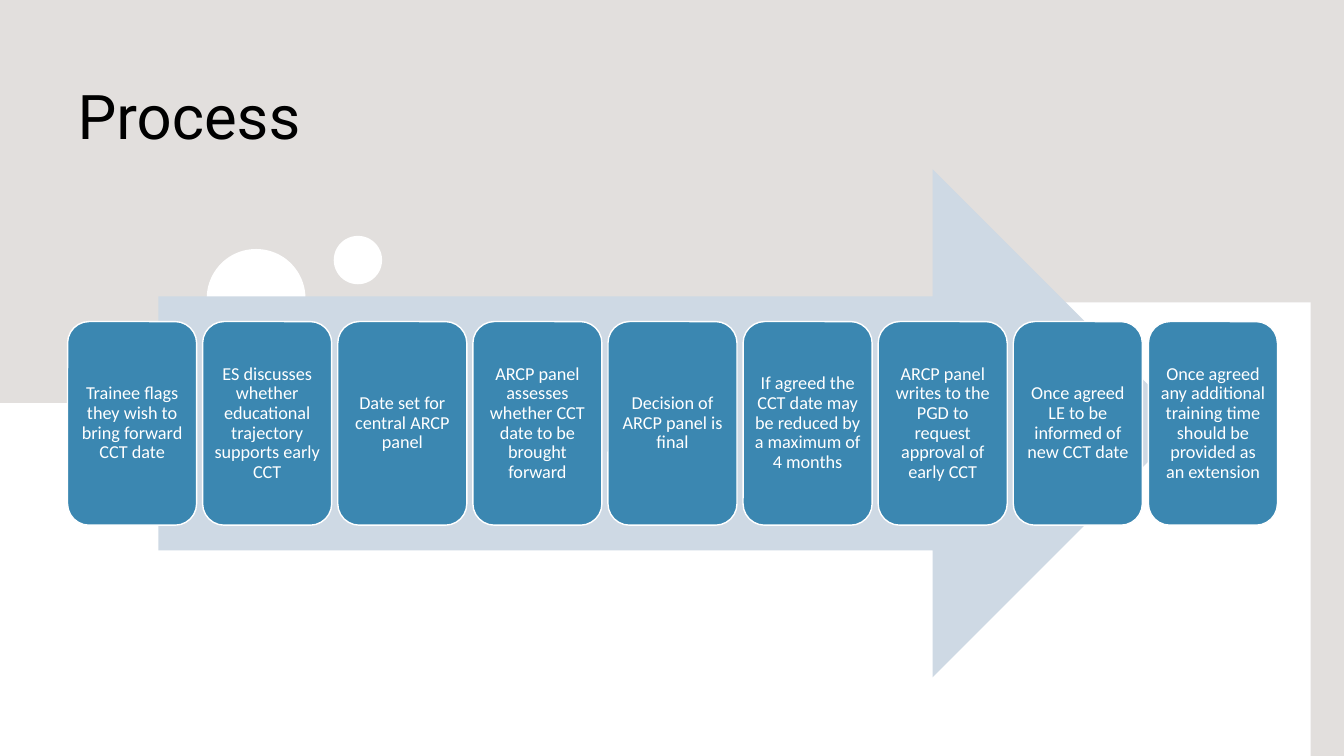
from pptx import Presentation
from pptx.dml.color import RGBColor
from pptx.enum.shapes import MSO_SHAPE
from pptx.enum.text import MSO_ANCHOR, PP_ALIGN
from pptx.util import Inches, Pt

TITLE = "Process"
STEPS = [
    "Trainee flags they wish to bring forward CCT date",
    "ES discusses whether educational trajectory supports early CCT",
    "Date set for central ARCP panel",
    "ARCP panel assesses whether CCT date to be brought forward",
    "Decision of ARCP panel is final",
    "If agreed the CCT date may be reduced by a maximum of 4 months",
    "ARCP panel writes to the PGD to request approval of early CCT",
    "Once agreed LE to be informed of new CCT date",
    "Once agreed any additional training time should be provided as an extension",
]

BLACK = RGBColor(0x00, 0x00, 0x00)
WHITE = RGBColor(0xFF, 0xFF, 0xFF)
STONE = RGBColor(0xE2, 0xDF, 0xDD)
PALE_BLUE = RGBColor(0xCE, 0xD9, 0xE4)
STEP_BLUE = RGBColor(0x3B, 0x87, 0xB1)

SLIDE_W, SLIDE_H = 13.33, 7.5
MARGIN = 0.67
STEP_TOP, STEP_W, STEP_H, STEP_PITCH = 3.19, 1.28, 2.02, 1.34
CURVE_STEPS = 24

BUBBLES = [(2.54, 2.96, 0.49), (3.55, 2.58, 0.24)]
HILL_START = (0, 3.81)
HILL_CURVES = [
    ((0.07, 3.77), (0.07, 3.77), (0.07, 3.77)),
    ((0.44, 3.58), (0.82, 3.59), (1.22, 3.67)),
    ((1.65, 3.76), (2.1, 3.83), (2.54, 3.83)),
    ((2.95, 3.84), (3.23, 3.53), (3.5, 3.26)),
    ((4.16, 2.57), (4.92, 2.37), (5.68, 2.76)),
    ((5.98, 2.91), (6.23, 3.18), (6.46, 3.44)),
    ((7.07, 4.13), (7.82, 4.15), (8.53, 3.79)),
    ((9.03, 3.54), (9.51, 3.23), (10.04, 3.02)),
    ((11.17, 2.56), (12.27, 2.58), (13.24, 3.23)),
]
HILL_END = [(SLIDE_W, 3.3), (SLIDE_W, SLIDE_H), (0, SLIDE_H)]


def curve_points(start, curves):
    points = []
    for first, second, end in curves:
        for step in range(1, CURVE_STEPS + 1):
            t = step / CURVE_STEPS
            u = 1 - t
            points.append(tuple(
                u**3 * a + 3 * u * u * t * b + 3 * u * t * t * c + t**3 * d
                for a, b, c, d in zip(start, first, second, end)
            ))
        start = end
    return points


def paint(shape, fill, outline=None):
    shape.shadow.inherit = False
    shape.fill.solid()
    shape.fill.fore_color.rgb = fill
    if outline is None:
        shape.line.fill.background()
    else:
        shape.line.color.rgb = outline
        shape.line.width = Pt(1)


def add_preset(preset, left, top, width, height, fill, outline=None):
    shape = slide.shapes.add_shape(
        preset, Inches(left), Inches(top), Inches(width), Inches(height))
    paint(shape, fill, outline)
    return shape


def write_text(shape, text, *, font, size, color, align=PP_ALIGN.LEFT,
               anchor=MSO_ANCHOR.MIDDLE, spacing=None, inset=None):
    frame = shape.text_frame
    frame.word_wrap = True
    frame.vertical_anchor = anchor
    if inset is not None:
        frame.margin_left = frame.margin_right = Inches(inset)
        frame.margin_top = frame.margin_bottom = Inches(inset)
    paragraph = frame.paragraphs[0]
    paragraph.alignment = align
    paragraph.line_spacing = spacing
    run = paragraph.add_run()
    run.text = text
    run.font.name = font
    run.font.size = Pt(size)
    run.font.color.rgb = color


presentation = Presentation()
presentation.slide_width = Inches(SLIDE_W)
presentation.slide_height = Inches(SLIDE_H)
slide = presentation.slides.add_slide(presentation.slide_layouts[5])
slide.background.fill.solid()
slide.background.fill.fore_color.rgb = STONE

title = slide.shapes.title
title.left, title.top = Inches(MARGIN), Inches(0.61)
title.width, title.height = Inches(12), Inches(0.95)
write_text(title, TITLE, font="Roboto", size=44, color=BLACK,
           anchor=MSO_ANCHOR.BOTTOM)

outline = slide.shapes.build_freeform(*HILL_START, scale=Inches(1))
outline.add_line_segments(curve_points(HILL_START, HILL_CURVES) + HILL_END)
paint(outline.convert_to_shape(), WHITE)

for center_x, center_y, radius in BUBBLES:
    add_preset(MSO_SHAPE.OVAL, center_x - radius, center_y - radius,
               2 * radius, 2 * radius, WHITE)

add_preset(MSO_SHAPE.RIGHT_ARROW, 1.57, 1.68, 10.2, 5.04, PALE_BLUE)

for index, step_text in enumerate(STEPS):
    step_card = add_preset(
        MSO_SHAPE.ROUNDED_RECTANGLE, MARGIN + index * STEP_PITCH, STEP_TOP,
        STEP_W, STEP_H, STEP_BLUE, WHITE)
    write_text(step_card, step_text, font="Calibri", size=13, color=WHITE,
               align=PP_ALIGN.CENTER, spacing=0.9, inset=0.05)

presentation.save("out.pptx")
